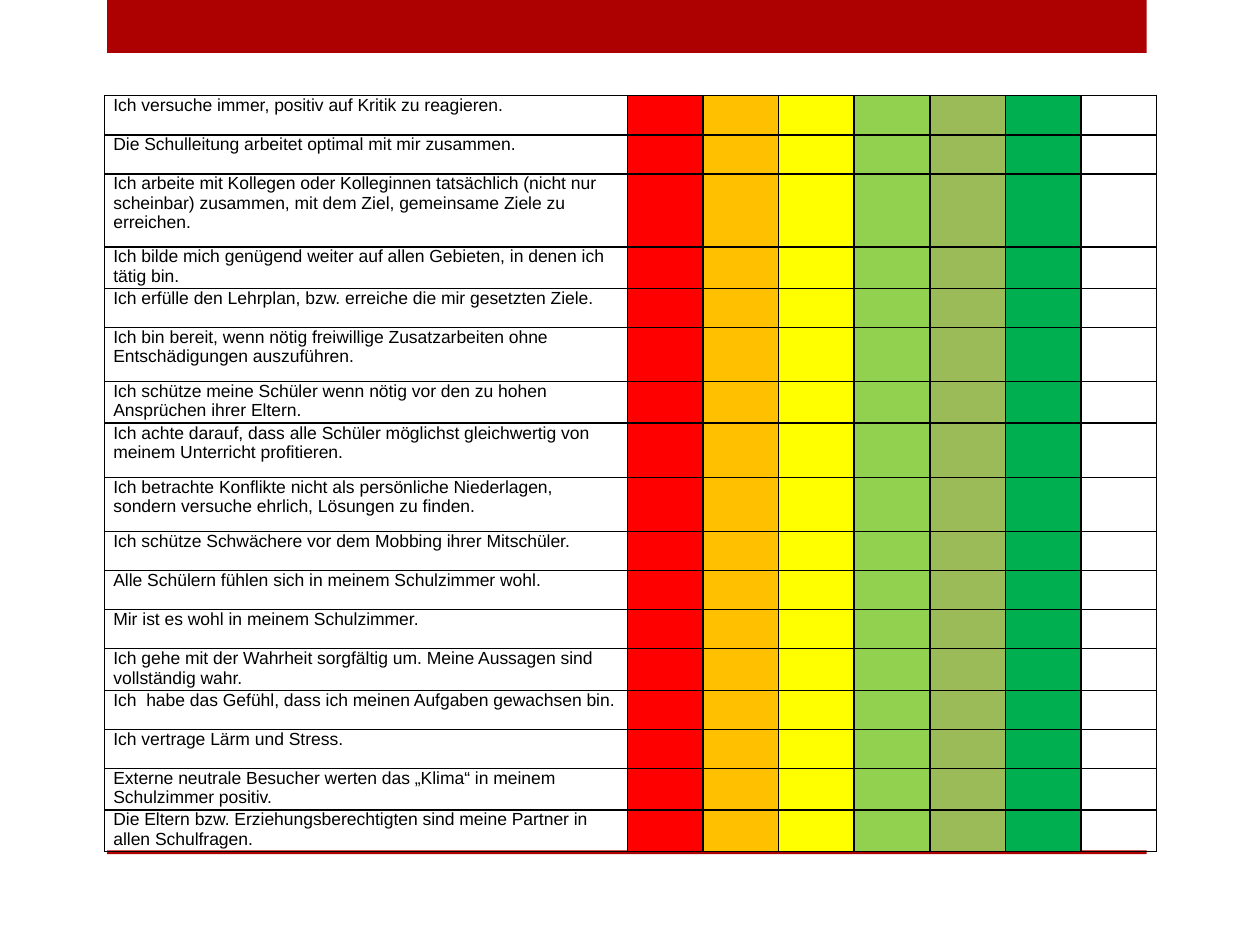
from lxml.etree import SubElement
from pptx import Presentation
from pptx.dml.color import RGBColor
from pptx.enum.shapes import MSO_SHAPE
from pptx.oxml.ns import qn
from pptx.util import Inches, Pt

COLORS = {
    "bar": "AD0101",
    "text": "000000",
    "border": "000000",
    "red": "FF0000",
    "orange": "FFC000",
    "yellow": "FFFF00",
    "light_green": "92D050",
    "olive": "9BBB59",
    "green": "00B050",
}
SCALE = ["red", "orange", "yellow", "light_green", "olive", "green", None]
FONT = "Arial"
FONT_SIZE = Pt(10)
SCALE_WIDTH = 0.6

SHORT, TIGHT, MEDIUM, TALL = 0.31, 0.33, 0.43, 0.58
STATEMENTS = [
    (SHORT, "Ich versuche immer, positiv auf Kritik zu reagieren."),
    (SHORT, "Die Schulleitung arbeitet optimal mit mir zusammen."),
    (TALL, "Ich arbeite mit Kollegen oder Kolleginnen tatsächlich (nicht nur "
           "scheinbar) zusammen, mit dem Ziel, gemeinsame Ziele zu erreichen."),
    (TIGHT, "Ich bilde mich genügend weiter auf allen Gebieten, in denen ich tätig bin."),
    (SHORT, "Ich erfülle den Lehrplan, bzw. erreiche die mir gesetzten Ziele."),
    (MEDIUM, "Ich bin bereit, wenn nötig freiwillige Zusatzarbeiten ohne "
             "Entschädigungen auszuführen."),
    (TIGHT, "Ich schütze meine Schüler wenn nötig vor den zu hohen Ansprüchen ihrer Eltern."),
    (MEDIUM, "Ich achte darauf, dass alle Schüler möglichst gleichwertig von "
             "meinem Unterricht profitieren."),
    (MEDIUM, "Ich betrachte Konflikte nicht als persönliche Niederlagen, sondern "
             "versuche ehrlich, Lösungen zu finden."),
    (SHORT, "Ich schütze Schwächere vor dem Mobbing ihrer Mitschüler."),
    (SHORT, "Alle Schülern fühlen sich in meinem Schulzimmer wohl."),
    (SHORT, "Mir ist es wohl in meinem Schulzimmer."),
    (TIGHT, "Ich gehe mit der Wahrheit sorgfältig um. Meine Aussagen sind vollständig wahr."),
    (SHORT, "Ich  habe das Gefühl, dass ich meinen Aufgaben gewachsen bin."),
    (SHORT, "Ich vertrage Lärm und Stress."),
    (TIGHT, "Externe neutrale Besucher werten das „Klima“ in meinem Schulzimmer positiv."),
    (TIGHT, "Die Eltern bzw. Erziehungsberechtigten sind meine Partner in allen Schulfragen."),
]


def rgb(name):
    return RGBColor.from_string(COLORS[name])


def add_bar(s, left, top, width, height):
    sp = s.shapes.add_shape(MSO_SHAPE.RECTANGLE, Inches(left), Inches(top),
                            Inches(width), Inches(height))
    sp.shadow.inherit = False
    sp.fill.solid()
    sp.fill.fore_color.rgb = rgb("bar")
    sp.line.fill.background()


def set_borders(cell):
    tc_pr = cell._tc.get_or_add_tcPr()
    for side in ("a:lnL", "a:lnR", "a:lnT", "a:lnB"):
        ln = SubElement(tc_pr, qn(side), w=str(Pt(1)))
        fill = SubElement(ln, qn("a:solidFill"))
        SubElement(fill, qn("a:srgbClr"), val=COLORS["border"])


def format_cell(cell, color=None):
    cell.margin_left = cell.margin_right = Inches(0.07)
    cell.margin_top = cell.margin_bottom = 0
    set_borders(cell)
    if color:
        cell.fill.solid()
        cell.fill.fore_color.rgb = rgb(color)
    else:
        cell.fill.background()


def add_statement(cell, text):
    format_cell(cell)
    r = cell.text_frame.paragraphs[0].add_run()
    r.text = text
    r.font.name = FONT
    r.font.size = FONT_SIZE
    r.font.bold = False
    r.font.color.rgb = rgb("text")


def add_rating(cell, color):
    format_cell(cell, color)
    p = cell.text_frame.paragraphs[0]
    SubElement(p._p, qn("a:endParaRPr"), sz=str(int(FONT_SIZE.pt * 100)))


def add_questionnaire(s, left, top, width, height):
    frame = s.shapes.add_table(len(STATEMENTS), len(SCALE) + 1, Inches(left),
                               Inches(top), Inches(width), Inches(height))
    table = frame.table
    table.first_row = table.horz_banding = False
    table.columns[0].width = Inches(width - SCALE_WIDTH * len(SCALE))
    for col in range(1, len(SCALE) + 1):
        table.columns[col].width = Inches(SCALE_WIDTH)
    for row, (row_height, text) in enumerate(STATEMENTS):
        table.rows[row].height = Inches(row_height)
        add_statement(table.cell(row, 0), text)
        for col, color in enumerate(SCALE, 1):
            add_rating(table.cell(row, col), color)


def main():
    prs = Presentation()
    prs.slide_width = Inches(10)
    prs.slide_height = Inches(7.5)
    s = prs.slides.add_slide(prs.slide_layouts[6])
    add_bar(s, 0.85, 0, 8.25, 0.42)
    add_bar(s, 0.85, 6.75, 8.25, 0.03)
    add_questionnaire(s, 0.83, 0.76, 8.35, 6)
    prs.save("out.pptx")


if __name__ == "__main__":
    main()
